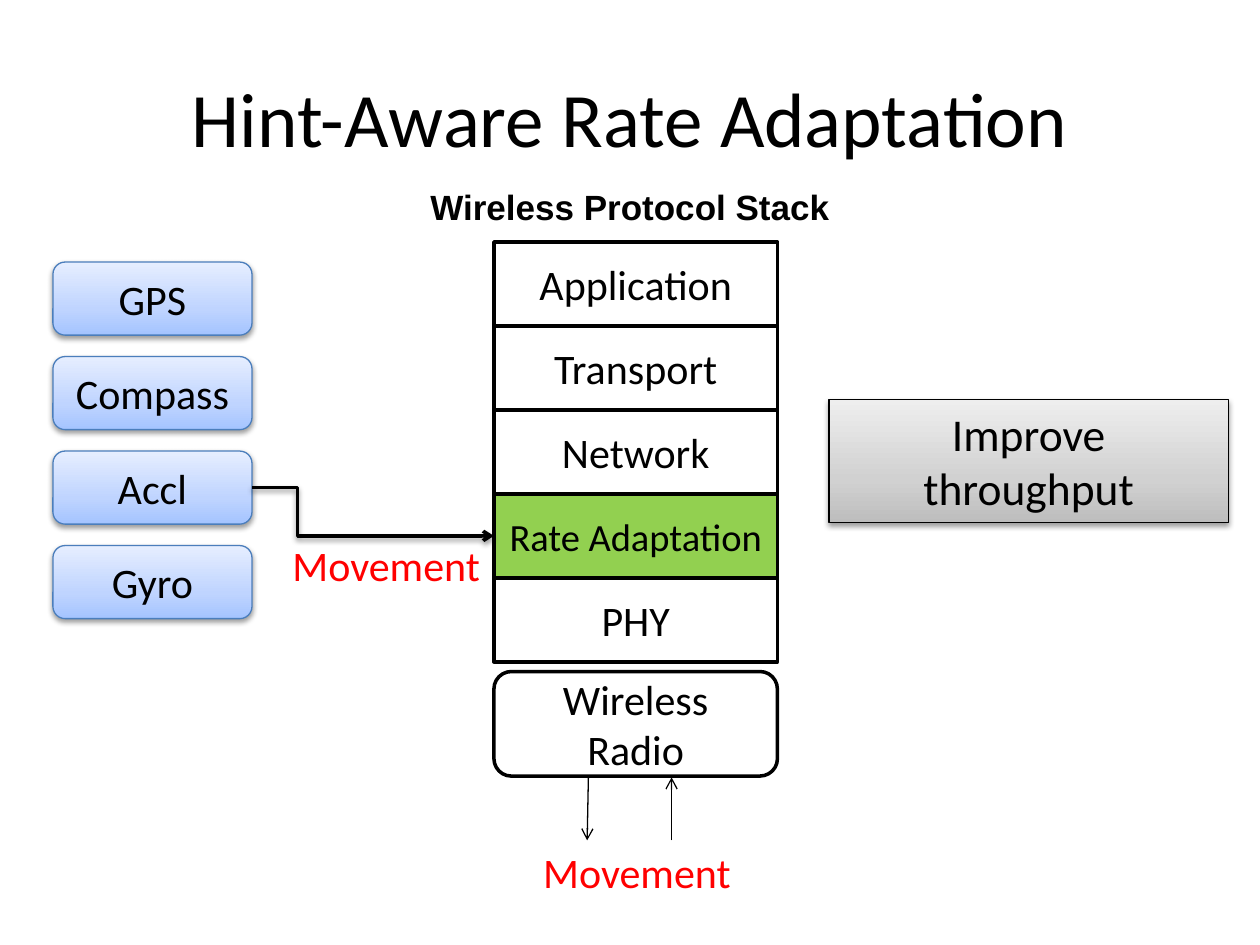
import pptx
import pptx.dml.color
import pptx.enum.shapes
import pptx.enum.text
import pptx.oxml
import pptx.oxml.ns
import pptx.util
from lxml import etree

Inches, Pt = pptx.util.Inches, pptx.util.Pt
RGB = pptx.dml.color.RGBColor.from_string
SHAPE = pptx.enum.shapes.MSO_SHAPE
CONNECTOR = pptx.enum.shapes.MSO_CONNECTOR
ALIGN, ANCHOR = pptx.enum.text.PP_ALIGN, pptx.enum.text.MSO_ANCHOR
AUTO_SIZE = pptx.enum.text.MSO_AUTO_SIZE
qn = pptx.oxml.ns.qn

THEME = {
    "font": "Calibri", "heading_font": "Arial",
    "ink": "000000", "paper": "FFFFFF", "active": "92D050", "hint": "FF0000",
    "sensor_line": "4B7EBC",
    "sensor_fill": ((0, "A4C4FF"), (35, "BFD4FF"), (100, "E6EEFF")),
    "goal_fill": ((0, "BDBDBD"), (35, "D1D1D1"), (100, "EEEEEE")),
    "title": 44, "goal": 26, "body": 24, "tight": 22, "heading": 20,
    "thick": 2, "thin": 0.75,
}

TITLE = "Hint-Aware Rate Adaptation"
HEADING = "Wireless Protocol Stack"
LAYERS = ["Application", "Transport", "Network", "Rate Adaptation", "PHY"]
ACTIVE_LAYER = "Rate Adaptation"
RADIO = "Wireless Radio"
SENSORS = ["GPS", "Compass", "Accl", "Gyro"]
HINT_SENSOR = "Accl"
HINT = "Movement"
HINT_PLACES = [(2.21, 4.23), (4.2, 6.67)]
RADIO_ARROWS = [(4.67, 6.17, 4.66, 6.67), (5.33, 6.67, 5.33, 6.17)]
GOAL = "Improve throughput"

STACK_LEFT, STACK_TOP, STACK_WIDTH, LAYER_HEIGHT = 3.92, 1.92, 2.25, 2 / 3
SENSOR_LEFT, SENSOR_TOP, SENSOR_PITCH = 0.42, 2.08, 0.75


def write(shape, text, size, color="ink", font="font", bold=None):
    frame = shape.text_frame
    frame.text = text
    paragraph = frame.paragraphs[0]
    paragraph.alignment = ALIGN.CENTER
    style = paragraph.runs[0].font
    style.name, style.size, style.bold = THEME[font], Pt(THEME[size]), bold
    style.color.rgb = RGB(THEME[color])


def add_effects(properties, shadow):
    """Replace the theme effects with a soft drop shadow or with none."""
    for effects in properties.findall(qn("a:effectLst")):
        properties.remove(effects)
    effects = etree.SubElement(properties, qn("a:effectLst"))
    if shadow:
        outer = etree.SubElement(effects, qn("a:outerShdw"), blurRad="40000", dist="20000",
                                 dir="5400000", rotWithShape="0")
        color = etree.SubElement(outer, qn("a:srgbClr"), val=THEME["ink"])
        etree.SubElement(color, qn("a:alpha"), val="38000")


def fill_gradient(shape, stops):
    shape.fill.gradient()
    shape.fill.gradient_angle = 90
    stop_list = shape._element.spPr.find(qn("a:gradFill")).find(qn("a:gsLst"))
    for stop in list(stop_list):
        stop_list.remove(stop)
    for position, color in stops:
        stop = etree.SubElement(stop_list, qn("a:gs"), pos=str(position * 1000))
        etree.SubElement(stop, qn("a:srgbClr"), val=color)


def add_box(kind, place, text, fill, line="ink", weight="thick", size="body"):
    """Add a labelled box; a fill with several stops also gets a shadow."""
    shape = slide.shapes.add_shape(kind, *map(Inches, place))
    gradient = not isinstance(THEME[fill], str)
    if gradient:
        fill_gradient(shape, THEME[fill])
    else:
        shape.fill.solid()
        shape.fill.fore_color.rgb = RGB(THEME[fill])
    shape.line.color.rgb = RGB(THEME[line])
    shape.line.width = Pt(THEME[weight])
    shape.shadow.inherit = False
    add_effects(shape._element.spPr, gradient)
    shape.text_frame.word_wrap = True
    shape.text_frame.vertical_anchor = ANCHOR.MIDDLE
    write(shape, text, size)
    return shape


def add_label(place, text, wrap, **style):
    label = slide.shapes.add_textbox(*map(Inches, place))
    label.text_frame.word_wrap = wrap
    label.text_frame.auto_size = AUTO_SIZE.SHAPE_TO_FIT_TEXT
    write(label, text, **style)


def add_arrow(kind, ends, weight, shadow=False):
    arrow = slide.shapes.add_connector(kind, *map(Inches, ends))
    arrow.line.color.rgb = RGB(THEME["ink"])
    arrow.line.width = Pt(THEME[weight])
    etree.SubElement(arrow.line._get_or_add_ln(), qn("a:tailEnd"), type="arrow")
    add_effects(arrow._element.spPr, shadow)
    return arrow


presentation = pptx.Presentation()
presentation.slide_width, presentation.slide_height = Inches(10), Inches(7.5)
slide = presentation.slides.add_slide(presentation.slide_layouts.get_by_name("Title Only"))

title = slide.shapes.title
title.left, title.top, title.width, title.height = map(Inches, (0.5, 0.3, 9, 1.25))
title.text_frame.vertical_anchor = ANCHOR.MIDDLE
write(title, TITLE, "title")

layers = {}
for index, name in enumerate(LAYERS):
    active = name == ACTIVE_LAYER
    place = (STACK_LEFT, STACK_TOP + index * LAYER_HEIGHT, STACK_WIDTH, LAYER_HEIGHT)
    layers[name] = add_box(SHAPE.RECTANGLE, place, name, "active" if active else "paper",
                           size="tight" if active else "body")
add_box(SHAPE.ROUNDED_RECTANGLE, (STACK_LEFT, 5.33, STACK_WIDTH, 0.83), RADIO, "paper")
add_label((3.25, 1.42, 3.5, 0.44), HEADING, True, size="heading", font="heading_font", bold=True)

sensors = {}
for index, name in enumerate(SENSORS):
    place = (SENSOR_LEFT, SENSOR_TOP + index * SENSOR_PITCH, 1.58, 0.58)
    sensors[name] = add_box(SHAPE.ROUNDED_RECTANGLE, place, name, "sensor_fill",
                            line="sensor_line", weight="thin")

hint_arrow = add_arrow(CONNECTOR.ELBOW, (2, 3.88, STACK_LEFT, 4.25), "thick", shadow=True)
hint_arrow.begin_connect(sensors[HINT_SENSOR], 3)
hint_arrow.end_connect(layers[ACTIVE_LAYER], 1)
geometry = hint_arrow._element.spPr.find(qn("a:prstGeom"))
etree.SubElement(geometry.find(qn("a:avLst")), qn("a:gd"), name="adj1", fmla="val 18900")

for ends in RADIO_ARROWS:
    add_arrow(CONNECTOR.STRAIGHT, ends, "thin")
for left, top in HINT_PLACES:
    add_label((left, top, 1.71, 0.5), HINT, False, size="body", color="hint")

goal = add_box(SHAPE.RECTANGLE, (6.58, 3.17, 3.17, 0.98), GOAL, "goal_fill",
               weight="thin", size="goal")
goal.text_frame.vertical_anchor = ANCHOR.TOP
goal.text_frame.margin_left = goal.text_frame.margin_right = Inches(0.2)
goal.text_frame.auto_size = AUTO_SIZE.SHAPE_TO_FIT_TEXT

presentation.save("out.pptx")
